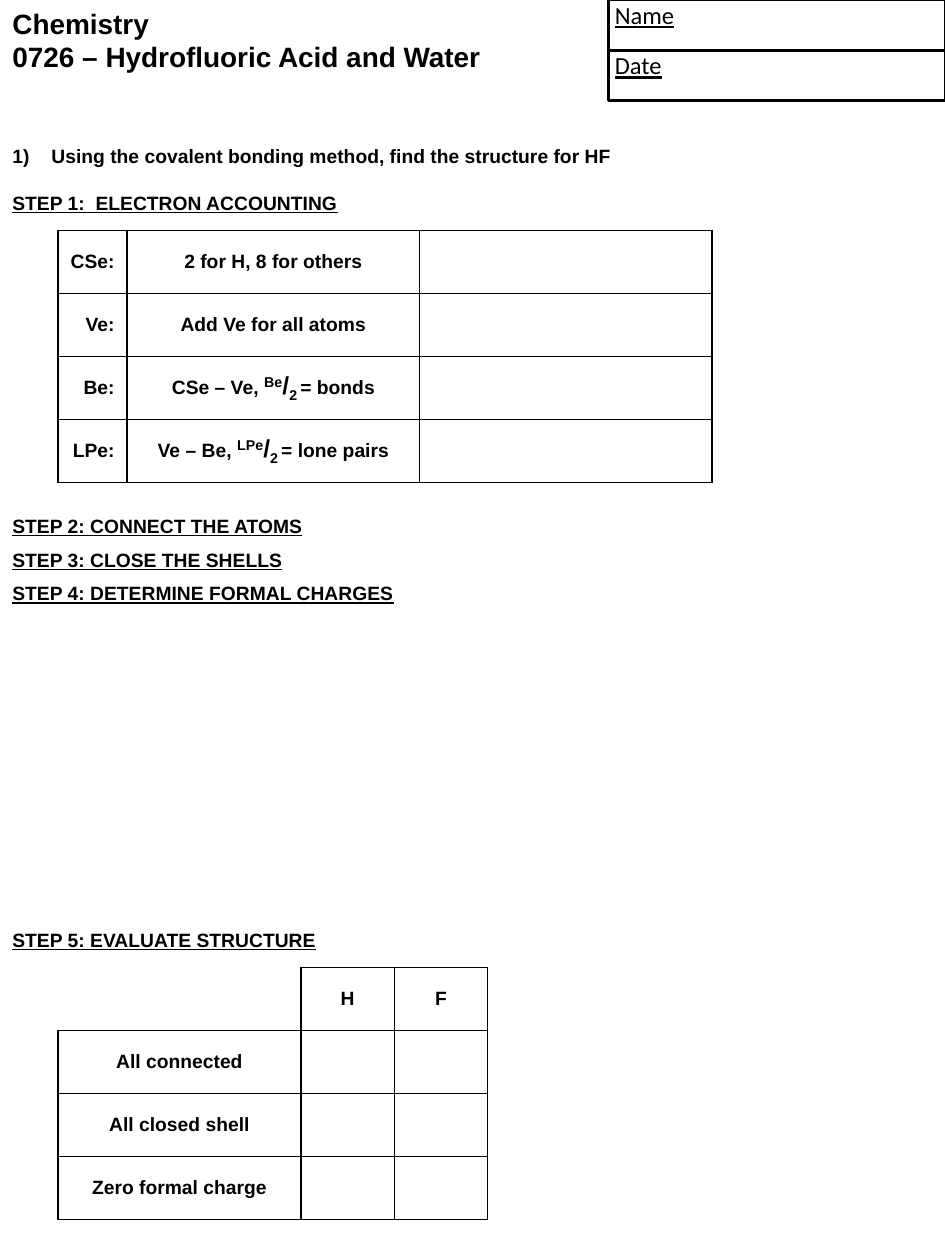
from lxml import etree
from pptx import Presentation, util as u
from pptx.dml.color import RGBColor
from pptx.enum import shapes, text
from pptx.oxml.ns import qn

HUE = {"ink": "000000", "page": "FFFFFF"}
LEFT, MID, RIGHT = text.PP_ALIGN.LEFT, text.PP_ALIGN.CENTER, text.PP_ALIGN.RIGHT
LINE = 13.2

deck = Presentation()
deck.slide_width, deck.slide_height = u.Inches(7.5), u.Inches(10)
W, H = deck.slide_width, deck.slide_height
ROW = H // 20
slide = deck.slides.add_slide(deck.slide_layouts[6])


def write(para, parts, size=11, face="Arial", bold=True, under=False, align=LEFT):
    para.alignment = align
    for part in [(parts,)] if isinstance(parts, str) else parts:
        words, pts, base = (part + (size, 0)[len(part) - 1:])
        run = para.add_run()
        run.text = words
        font = run.font
        font.size, font.name, font.bold, font.underline = u.Pt(pts), face, bold, under
        font.color.rgb = RGBColor.from_string(HUE["ink"])
        if base:
            run._r.get_or_add_rPr().set("baseline", str(base * 1000))


def grid(top, cols, rows, aligns, blank=None):
    frame = slide.shapes.add_table(len(rows), len(cols), u.Inches(0.46), top,
                                   u.Inches(sum(cols)), ROW * len(rows))
    table = frame.table
    table.first_row = table.horz_banding = False
    for col, wide in zip(table.columns, cols):
        col.width = u.Inches(wide)
    for r, row in enumerate(rows):
        table.rows[r].height = ROW
        for c, words in enumerate(row):
            cell = table.cell(r, c)
            cell.vertical_anchor = text.MSO_ANCHOR.MIDDLE
            props = cell._tc.get_or_add_tcPr()
            for side in "LRTB":
                hue = "page" if (r, c) == blank and side in "LT" else "ink"
                edge = etree.SubElement(props, qn("a:ln" + side), w=str(u.Pt(1)))
                fill = etree.SubElement(edge, qn("a:solidFill"))
                etree.SubElement(fill, qn("a:srgbClr"), val=HUE[hue])
            cell.fill.background()
            if words:
                write(cell.text_frame.paragraphs[0], words, align=aligns[c])


body = slide.shapes.add_textbox(0, H * 11 // 100, W, H * 89 // 100).text_frame
body.word_wrap = True
steps = [
    ("1)\tUsing the covalent bonding method, find the structure for HF", 0),
    ("STEP 1:  ELECTRON ACCOUNTING", LINE),
    ("STEP 2: CONNECT THE ATOMS", 13 * LINE),
    ("STEP 3: CLOSE THE SHELLS", 6),
    ("STEP 4: DETERMINE FORMAL CHARGES", 6),
    ("STEP 5: EVALUATE STRUCTURE", 14 * LINE),
]
for n, (words, gap) in enumerate(steps):
    para = body.paragraphs[0] if n == 0 else body.add_paragraph()
    para.line_spacing, para.space_before = u.Pt(LINE), u.Pt(gap)
    props = para._p.get_or_add_pPr()
    props.set("marL", str(u.Inches(0.31)))
    props.set("indent", str(-u.Inches(0.31)))
    write(para, words, under=n > 0)

title = slide.shapes.add_textbox(0, 0, u.Inches(4.62), u.Inches(0.69)).text_frame
title.word_wrap = True
write(title.paragraphs[0], "Chemistry", size=16)
write(title.add_paragraph(), "0726 – Hydrofluoric Acid and Water", size=16)

tall, left = H // 25, u.Inches(4.83)
for n, label in enumerate(["Name", "Date"]):
    box = slide.shapes.add_shape(shapes.MSO_SHAPE.RECTANGLE, left, n * tall, W - left, tall)
    box.shadow.inherit = False
    box.fill.background()
    box.line.color.rgb = RGBColor.from_string(HUE["ink"])
    box.line.width = u.Pt(1.5)
    frame = box.text_frame
    frame.word_wrap = False
    frame.vertical_anchor = text.MSO_ANCHOR.TOP
    frame.margin_left = u.Inches(0.05)
    frame.margin_top = frame.margin_right = frame.margin_bottom = 0
    write(frame.paragraphs[0], label, size=14, face="Calibri", bold=False, under=True)

half = [("/", 14), ("2", 14, -25), (" ", 11, -25)]
grid(u.Inches(1.83), [0.55, 2.32, 2.32], [
    ["CSe:", "2 for H, 8 for others", ""],
    ["Ve:", "Add Ve for all atoms", ""],
    ["Be:", [("CSe – Ve, ",), ("Be", 14, 30), *half, ("= bonds",)], ""],
    ["LPe:", [("Ve – Be, ",), ("LPe", 14, 30), *half, ("= lone pairs",)], ""],
], [RIGHT, MID, MID])
grid(u.Inches(7.68), [1.93, 0.74, 0.74], [
    ["", "H", "F"],
    ["All connected", "", ""],
    ["All closed shell", "", ""],
    ["Zero formal charge", "", ""],
], [MID] * 3, blank=(0, 0))

deck.save("out.pptx")
